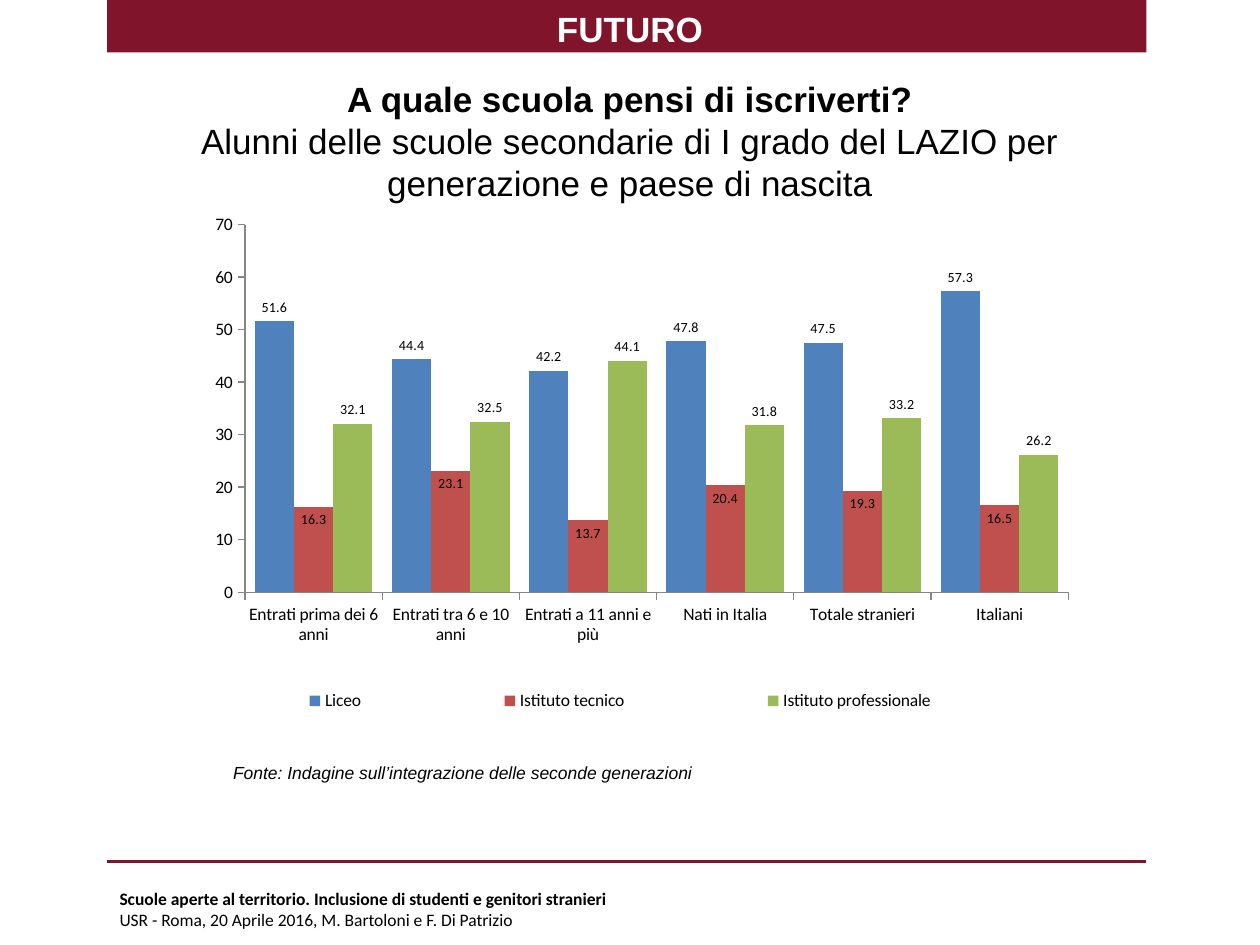
"""Build the slide on school choices of pupils in Lazio."""
from lxml import etree
from pptx import Presentation
from pptx.chart.data import CategoryChartData
from pptx.dml.color import RGBColor
from pptx.enum.chart import XL_CHART_TYPE, XL_LABEL_POSITION, XL_LEGEND_POSITION, XL_TICK_MARK
from pptx.enum.shapes import MSO_CONNECTOR, MSO_SHAPE
from pptx.enum.text import MSO_ANCHOR, PP_ALIGN
from pptx.oxml import parse_xml
from pptx.oxml.ns import qn
from pptx.util import Cm, Pt

COLUMN = XL_CHART_TYPE.COLUMN_CLUSTERED
OUTER, INNER = XL_LABEL_POSITION.OUTSIDE_END, XL_LABEL_POSITION.INSIDE_END
BOTTOM = XL_LEGEND_POSITION.BOTTOM
TICK = XL_TICK_MARK.OUTSIDE
LEFT, CENTER = PP_ALIGN.LEFT, PP_ALIGN.CENTER
TOP, MIDDLE = MSO_ANCHOR.TOP, MSO_ANCHOR.MIDDLE
NS = "http://schemas.openxmlformats.org/drawingml/2006/chart"
WINE, BLACK, WHITE, GREY = "7F142A", "000000", "FFFFFF", "868686"
EDGE, SPAN = 2.16, 20.95

TEXTS = [
    dict(box=(0, -0.02, 25.4, 1.2), lines=[("FUTURO", True)],
         size=20, face="Arial", hue=WHITE, align=CENTER, anchor=MIDDLE),
    dict(box=(0, 1.25, 25.4, 3.18), size=20, face="Arial", align=CENTER, anchor=MIDDLE,
         lines=[("A quale scuola pensi di iscriverti?", True),
                ("Alunni delle scuole secondarie di I grado del LAZIO per", False),
                ("generazione e paese di nascita", False)]),
    dict(box=(4.45, 15.24, 12.7, 0.69), size=10, face="Arial", slant=True,
         lines=[("Fonte: Indagine sull’integrazione delle seconde generazioni", False)]),
    dict(box=(EDGE, 17.78, SPAN, 1.12), size=10, face="Calibri",
         lines=[("Scuole aperte al territorio. Inclusione di studenti e genitori stranieri", True),
                ("USR - Roma, 20 Aprile 2016, M. Bartoloni e F. Di Patrizio", False)]),
]
CATS = ["Entrati prima dei 6 anni", "Entrati tra 6 e 10 anni", "Entrati a 11 anni e più",
        "Nati in Italia", "Totale stranieri", "Italiani"]
SERIES = [
    ("Liceo", "4F81BD", OUTER, [51.6, 44.4, 42.2, 47.8, 47.5, 57.3]),
    ("Istituto tecnico", "C0504D", INNER, [16.3, 23.1, 13.7, 20.4, 19.3, 16.5]),
    ("Istituto professionale", "9BBB59", OUTER, [32.1, 32.5, 44.1, 31.8, 33.2, 26.2]),
]


def rgb(hue):
    return RGBColor.from_string(hue)


def place(box):
    return [Cm(n) for n in box]


def style(font, size, face, hue=BLACK):
    font.size, font.name = Pt(size), face
    font.color.rgb = rgb(hue)


def add_text(slide, box, lines, size, face, hue=BLACK, slant=False, align=LEFT, anchor=TOP):
    frame = slide.shapes.add_textbox(*place(box)).text_frame
    frame.word_wrap, frame.vertical_anchor = True, anchor
    para = frame.paragraphs[0]
    para.alignment = align
    style(para.font, size, face, hue)
    para.font.italic = slant
    for i, (words, bold) in enumerate(lines):
        if i:
            para.add_line_break()
        run = para.add_run()
        run.text, run.font.bold = words, bold
        style(run.font, size, face, hue)
        run.font.italic = slant


def layout(x, y, w, h, inner=False):
    target = '<c:layoutTarget val="inner"/>' if inner else ""
    rules = '<c:xMode val="edge"/><c:yMode val="edge"/>'
    sizes = "".join(f'<c:{k} val="{v}"/>' for k, v in zip("xywh", (x, y, w, h)))
    return parse_xml(f'<c:layout xmlns:c="{NS}"><c:manualLayout>{target}{rules}{sizes}'
                     "</c:manualLayout></c:layout>")


def set_layout(parent, index, new):
    for old in parent.findall(qn("c:layout")):
        parent.remove(old)
    parent.insert(index, new)


def add_bars(slide):
    data = CategoryChartData(number_format="#,##0.0")
    data.categories = CATS
    for name, _, _, vals in SERIES:
        data.add_series(name, vals)
    chart = slide.shapes.add_chart(COLUMN, *place((3.28, 4.11, 18.44, 10.44)), data).chart
    chart.has_title = False
    style(chart.font, 10, "Calibri")
    plot = chart.plots[0]
    plot.gap_width, plot.overlap, plot.vary_by_categories = 50, 0, False
    for bars, (_, hue, spot, _) in zip(plot.series, SERIES):
        bars.format.fill.solid()
        bars.format.fill.fore_color.rgb = rgb(hue)
        tags = bars.data_labels
        tags.show_value, tags.position = True, spot
        tags.number_format, tags.number_format_is_linked = "#,##0.0", False
        style(tags.font, 8, "Calibri")
    for axis in (chart.category_axis, chart.value_axis):
        axis.has_major_gridlines = False
        axis.major_tick_mark = TICK
        axis.format.line.color.rgb = rgb(GREY)
    scale = chart.value_axis
    scale.minimum_scale, scale.maximum_scale, scale.major_unit = 0, 70, 10
    scale.tick_labels.number_format = "#,##0"
    scale.tick_labels.number_format_is_linked = False
    chart.has_legend = True
    key = chart.legend
    key.position, key.include_in_layout = BOTTOM, False
    area = plot._element.getparent()
    set_layout(area, 0, layout(0.09, 0.04, 0.9, 0.71, True))
    set_layout(key._element, 1, layout(0.01, 0.92, 0.98, 0.08))


def main():
    deck = Presentation()
    deck.slide_width, deck.slide_height = Cm(25.4), Cm(19.05)
    slide = deck.slides.add_slide(deck.slide_layouts[6])
    band = slide.shapes.add_shape(MSO_SHAPE.RECTANGLE, *place((EDGE, 0, SPAN, 1.06)))
    band.shadow.inherit = False
    band.fill.solid()
    band.fill.fore_color.rgb = rgb(WINE)
    band.line.fill.background()
    ends = place((EDGE, 17.37, EDGE + SPAN, 17.37))
    rule = slide.shapes.add_connector(MSO_CONNECTOR.STRAIGHT, *ends)
    rule.line.color.rgb, rule.line.width = rgb(WINE), Pt(2)
    etree.SubElement(rule._element.spPr, qn("a:effectLst"))
    for item in TEXTS:
        add_text(slide, **item)
    add_bars(slide)
    deck.save("out.pptx")


if __name__ == "__main__":
    main()
